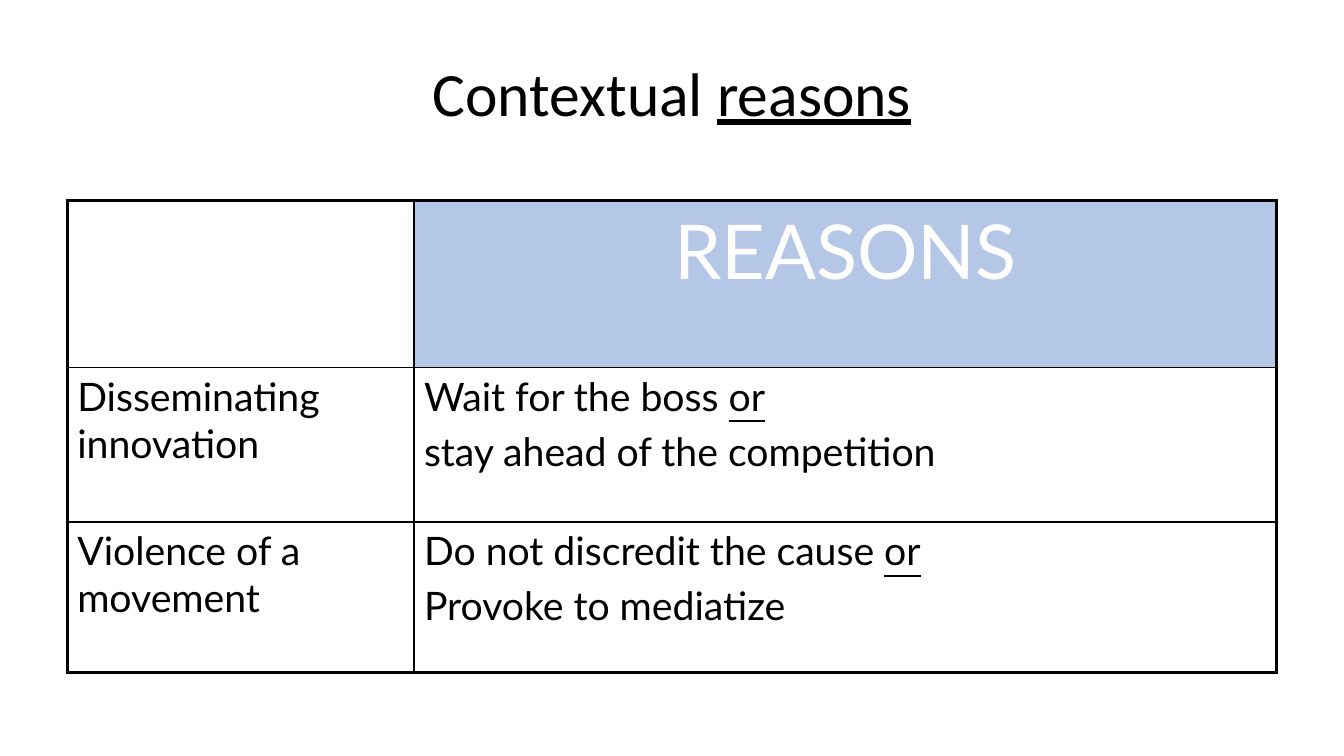
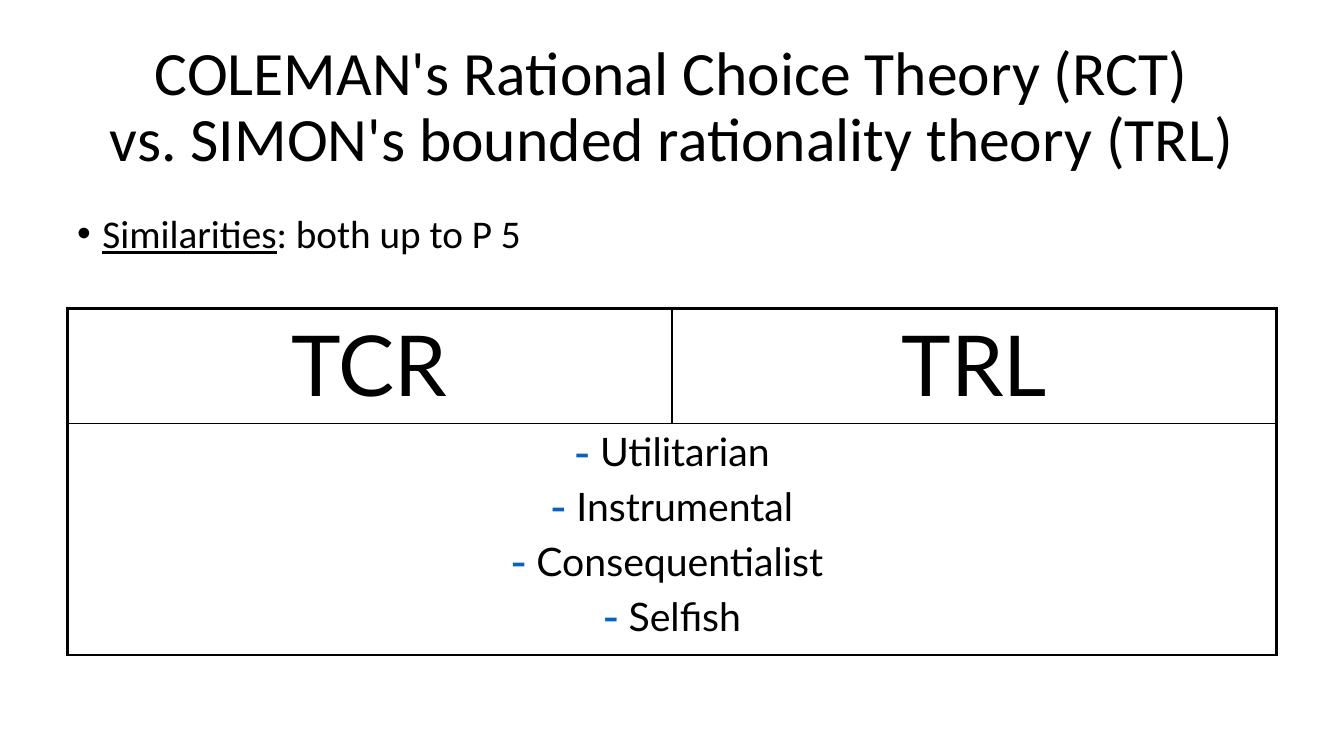
from pptx import Presentation
from pptx.dml.color import RGBColor
from pptx.enum.text import MSO_ANCHOR, PP_ALIGN
from pptx.oxml.ns import qn
from pptx.util import Inches, Pt
from lxml.etree import SubElement, Element

# Shared style
BLACK, WHITE = "000000", "FFFFFF"
HEADER_BLUE, BULLET_BLUE = "B4C7E7", "0563C1"
TEXT_FONT, TABLE_FONT = "Calibri", "Lato"
TITLE_SIZE, BODY_SIZE = 44, 28
OUTER_LINE, INNER_LINE = 2.25, 1
GRID_COLUMNS, MARGIN, CONTENT_WIDTH = 20, 1, 18


def color(hex_value):
    return RGBColor.from_string(hex_value)


class Deck:
    """Holds the style and the current slide; lengths are square grid units."""

    def __init__(self):
        self.presentation = Presentation()
        self.presentation.slide_width = Inches(13.33)
        self.presentation.slide_height = Inches(7.5)
        self.unit = self.presentation.slide_width / GRID_COLUMNS
        self.slide = None

    def grid(self, *lengths):
        return [round(length * self.unit) for length in lengths]

    def new_slide(self):
        self.slide = self.presentation.slides.add_slide(self.presentation.slide_layouts[6])

    def fill_paragraph(self, paragraph, text, size, font=TEXT_FONT, ink=BLACK,
                       align=PP_ALIGN.LEFT):
        """Set text in which _underscores_ mark underlined words."""
        paragraph.alignment = align
        for line_number, line in enumerate(text.split("\n")):
            if line_number:
                paragraph.add_line_break()
            for position, piece in enumerate(line.split("_")):
                if piece:
                    run = paragraph.add_run()
                    run.text = piece
                    run.font.underline = position % 2 == 1
        for run in paragraph.runs:
            run.font.size, run.font.name = Pt(size), font
            run.font.color.rgb = color(ink)

    def bullet(self, paragraph, character, ink=BLACK, percent=100, indent=0):
        properties = paragraph._p.get_or_add_pPr()
        properties.set("marL", str(Inches(indent)))
        properties.set("indent", str(-Inches(indent)))
        bullet_color = SubElement(properties, qn("a:buClr"))
        SubElement(bullet_color, qn("a:srgbClr"), val=ink)
        SubElement(properties, qn("a:buSzPct"), val=str(percent * 1000))
        SubElement(properties, qn("a:buFont"), typeface="Arial")
        SubElement(properties, qn("a:buChar"), char=character)

    def text_box(self, top, width, height, anchor):
        box = self.slide.shapes.add_textbox(*self.grid(MARGIN, top, width, height))
        box.text_frame.word_wrap = True
        box.text_frame.vertical_anchor = anchor
        paragraph = box.text_frame.paragraphs[0]
        paragraph.line_spacing = 0.9
        return paragraph

    def title(self, text, height):
        paragraph = self.text_box(0.48, CONTENT_WIDTH, height, MSO_ANCHOR.MIDDLE)
        self.fill_paragraph(paragraph, text, TITLE_SIZE, align=PP_ALIGN.CENTER)

    def bullet_text(self, text, top, width, height):
        paragraph = self.text_box(top, width, height, MSO_ANCHOR.TOP)
        paragraph.space_before = Pt(10)
        self.fill_paragraph(paragraph, text, BODY_SIZE)
        self.bullet(paragraph, "•", indent=0.25)

    def table(self, top, columns, rows):
        frame = self.slide.shapes.add_table(
            len(rows), len(columns), *self.grid(MARGIN, top, sum(columns), sum(rows)))
        table = frame.table
        table.first_row = table.horz_banding = False
        for column, width in zip(table.columns, self.grid(*columns)):
            column.width = width
        for row, height in zip(table.rows, self.grid(*rows)):
            row.height = height
        for cell in table.iter_cells():
            cell.fill.background()
        return table

    def cell(self, cell, lines, size=BODY_SIZE, ink=BLACK, align=PP_ALIGN.LEFT,
             fill=None, dashes=False):
        if fill:
            cell.fill.solid()
            cell.fill.fore_color.rgb = color(fill)
        for number, line in enumerate(lines):
            frame = cell.text_frame
            paragraph = frame.add_paragraph() if number else frame.paragraphs[0]
            paragraph.space_before = Pt(size * 0.2)
            self.fill_paragraph(paragraph, line, size, TABLE_FONT, ink, align)
            if dashes:
                self.bullet(paragraph, "-", BULLET_BLUE, 120)

    def borders(self, table):
        """Draw a heavy frame around the table and thin lines inside it."""
        last_row, last_column = len(table.rows) - 1, len(table.columns) - 1
        for row in range(last_row + 1):
            for column in range(last_column + 1):
                cell = table.cell(row, column)
                span = cell.span_width if cell.is_merge_origin else 1
                edges = {"a:lnL": column == 0,
                         "a:lnR": column + span - 1 == last_column,
                         "a:lnT": row == 0,
                         "a:lnB": row == last_row}
                if cell.is_spanned:
                    del edges["a:lnL"]
                properties = cell._tc.get_or_add_tcPr()
                for position, (edge, outer) in enumerate(edges.items()):
                    width = Pt(OUTER_LINE if outer else INNER_LINE)
                    line = Element(qn(edge), w=str(width))
                    line_fill = SubElement(line, qn("a:solidFill"))
                    SubElement(line_fill, qn("a:srgbClr"), val=BLACK)
                    properties.insert(position, line)


def reasons_slide(deck):
    deck.new_slide()
    deck.title("Contextual _reasons_", 1.9)

    # Header and one row per context
    table = deck.table(2.98, [5.16, 12.84], [2.49, 2.3, 2.24])
    deck.cell(table.cell(0, 1), ["REASONS"], 54, WHITE, PP_ALIGN.CENTER, HEADER_BLUE)
    contexts = [
        ("Disseminating innovation",
         ["Wait for the boss _or_", "stay ahead of the competition"]),
        ("Violence of a movement",
         ["Do not discredit the cause _or_", "Provoke to mediatize"]),
    ]
    for row, (context, reasons) in enumerate(contexts, 1):
        deck.cell(table.cell(row, 0), [context])
        deck.cell(table.cell(row, 1), reasons)
    deck.borders(table)


def theories_slide(deck):
    deck.new_slide()
    deck.title("COLEMAN's Rational Choice Theory (RCT)\n"
               "vs. SIMON's bounded rationality theory (TRL)", 2.27)
    deck.bullet_text("_Similarities_: both up to P 5", 3.12, 10.92, 0.96)

    # Two theories above their shared traits
    table = deck.table(4.59, [9, 9], [1.71, 3.45])
    for column, theory in enumerate(["TCR", "TRL"]):
        deck.cell(table.cell(0, column), [theory], 60, align=PP_ALIGN.CENTER)
    table.cell(1, 0).merge(table.cell(1, 1))
    traits = [" Utilitarian", " Instrumental", " Consequentialist ", " Selfish"]
    deck.cell(table.cell(1, 0), traits, align=PP_ALIGN.CENTER, dashes=True)
    deck.borders(table)


def main():
    deck = Deck()
    reasons_slide(deck)
    theories_slide(deck)
    deck.presentation.save("out.pptx")


if __name__ == "__main__":
    main()
